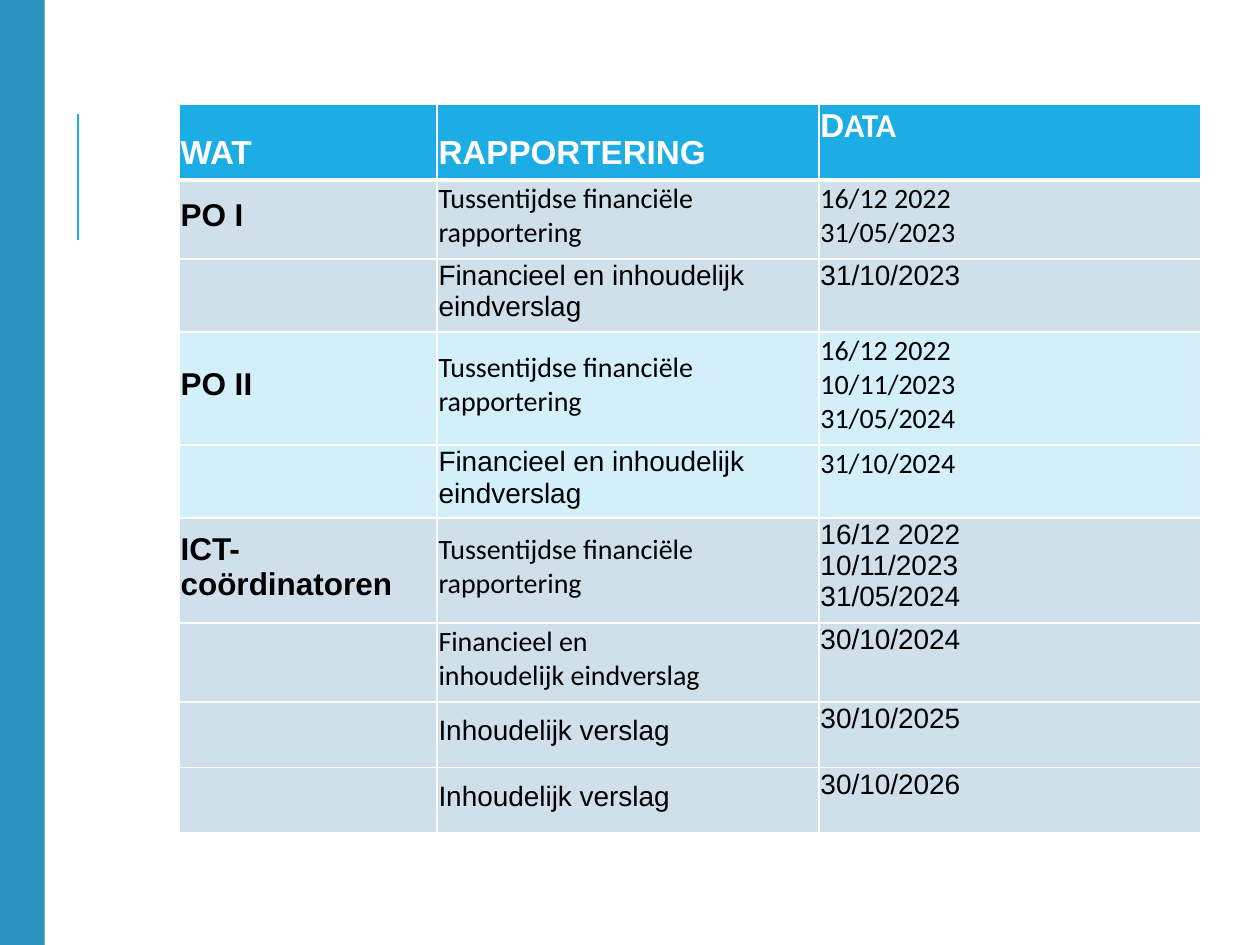
from lxml import etree
from pptx import Presentation
from pptx.dml.color import RGBColor
from pptx.enum.shapes import MSO_CONNECTOR, MSO_SHAPE
from pptx.enum.text import MSO_ANCHOR
from pptx.oxml import parse_xml
from pptx.oxml.ns import nsdecls, qn
from pptx.util import Cm, Pt

RECTANGLE = MSO_SHAPE.RECTANGLE
STRAIGHT = MSO_CONNECTOR.STRAIGHT
TOP, MIDDLE, BOTTOM = MSO_ANCHOR.TOP, MSO_ANCHOR.MIDDLE, MSO_ANCHOR.BOTTOM

COLORS = {
    "sidebar": "2B92BE",
    "accent": "1CADE4",
    "band_grey": "CFE0EA",
    "band_blue": "D2EFFA",
    "white": "FFFFFF",
    "black": "000000",
}
SANS, BODY = "Arial", "Calibri"
COLUMN_WIDTHS = [5.2, 7.7, 7.7]
HEADERS = [("WAT", BOTTOM), ("RAPPORTERING", BOTTOM), ("DATA", TOP)]
INTERIM = "Tussentijdse financiële rapportering"
FINAL = "Financieel en inhoudelijk eindverslag"
FINAL_JOINED = "Financieel en inhoudelijk\u00a0eindverslag"
CONTENT = "Inhoudelijk verslag"
HEADER_HEIGHT = 1.52
ROWS = [
    (1.57, "band_grey", "PO I", INTERIM, BODY, "16/12 2022\n31/05/2023", BODY),
    (1.47, "band_grey", "", FINAL, SANS, "31/10/2023", SANS),
    (2.28, "band_blue", "PO II", INTERIM, BODY, "16/12 2022\n10/11/2023\n31/05/2024", BODY),
    (1.47, "band_blue", "", FINAL, SANS, "31/10/2024", BODY),
    (2.12, "band_grey", "ICT-coördinatoren", INTERIM, BODY, "16/12 2022\n10/11/2023\n31/05/2024", SANS),
    (1.57, "band_grey", "", FINAL_JOINED, BODY, "30/10/2024", SANS),
    (1.32, "band_grey", "", CONTENT, SANS, "30/10/2025", SANS),
    (1.32, "band_grey", "", CONTENT, SANS, "30/10/2026", SANS),
]


def rgb(name):
    return RGBColor.from_string(COLORS[name])


def add_sidebar(slide, height):
    shape = slide.shapes.add_shape(RECTANGLE, 0, 0, Cm(0.9), height)
    shape.shadow.inherit = False
    shape.fill.solid()
    shape.fill.fore_color.rgb = rgb("sidebar")
    shape.line.fill.background()


def add_accent_line(slide):
    connector = slide.shapes.add_connector(STRAIGHT, Cm(1.57), Cm(4.83), Cm(1.57), Cm(2.29))
    connector.line.color.rgb = rgb("accent")
    connector.line.width = Pt(1.5)
    etree.SubElement(connector._element.spPr, qn("a:effectLst"))


def style_run(run, font_name, size, color, bold):
    run.font.name = font_name
    run.font.size = Pt(size)
    run.font.color.rgb = rgb(color)
    run.font.bold = bold


def set_borders(cell, top=1, bottom=1):
    properties = cell._tc.get_or_add_tcPr()
    for side, width in (("L", 1), ("R", 1), ("T", top), ("B", bottom)):
        properties.append(parse_xml(
            f'<a:ln{side} {nsdecls("a")} w="{Pt(width)}"><a:solidFill>'
            f'<a:srgbClr val="{COLORS["white"]}"/></a:solidFill></a:ln{side}>'
        ))


def fill_cell(cell, text, fill, anchor, font_name, size, color="black", bold=False):
    cell.fill.solid()
    cell.fill.fore_color.rgb = rgb(fill)
    cell.vertical_anchor = anchor
    cell.margin_left = cell.margin_right = cell.margin_top = Cm(0.03)
    cell.margin_bottom = Cm(0.18)
    cell.text_frame.text = text
    for paragraph in cell.text_frame.paragraphs:
        for run in paragraph.runs:
            style_run(run, font_name, size, color, bold)


def add_header_row(table):
    table.rows[0].height = Cm(HEADER_HEIGHT)
    for cell, (text, anchor) in zip(table.rows[0].cells, HEADERS):
        set_borders(cell, bottom=3)
        fill_cell(cell, text, "accent", anchor, SANS, 19, "white", True)
    paragraph = table.cell(0, 2).text_frame.paragraphs[0]
    paragraph.runs[0].text = "D"
    ending = paragraph.add_run()
    ending.text = "ATA"
    style_run(ending, BODY, 19, "white", True)


def add_report_table(slide):
    heights = [HEADER_HEIGHT] + [row[0] for row in ROWS]
    frame = slide.shapes.add_table(
        len(heights), len(COLUMN_WIDTHS), Cm(3.61), Cm(2.11),
        Cm(sum(COLUMN_WIDTHS)), Cm(sum(heights)),
    )
    table = frame.table
    for column, width in zip(table.columns, COLUMN_WIDTHS):
        column.width = Cm(width)
    add_header_row(table)
    for index, row in enumerate(ROWS, start=1):
        height, fill, project, report, report_font, dates, dates_font = row
        table.rows[index].height = Cm(height)
        cells = list(table.rows[index].cells)
        for cell in cells:
            set_borders(cell, top=3 if index == 1 else 1)
        fill_cell(cells[0], project, fill, MIDDLE, SANS, 18, bold=True)
        fill_cell(cells[1], report, fill, MIDDLE, report_font, 16)
        fill_cell(cells[2], dates, fill, TOP, dates_font, 16)


def main():
    presentation = Presentation()
    presentation.slide_width = Cm(25.4)
    presentation.slide_height = Cm(19.05)
    slide = presentation.slides.add_slide(presentation.slide_layouts[6])
    add_accent_line(slide)
    add_sidebar(slide, presentation.slide_height)
    add_report_table(slide)
    presentation.save("out.pptx")


if __name__ == "__main__":
    main()
